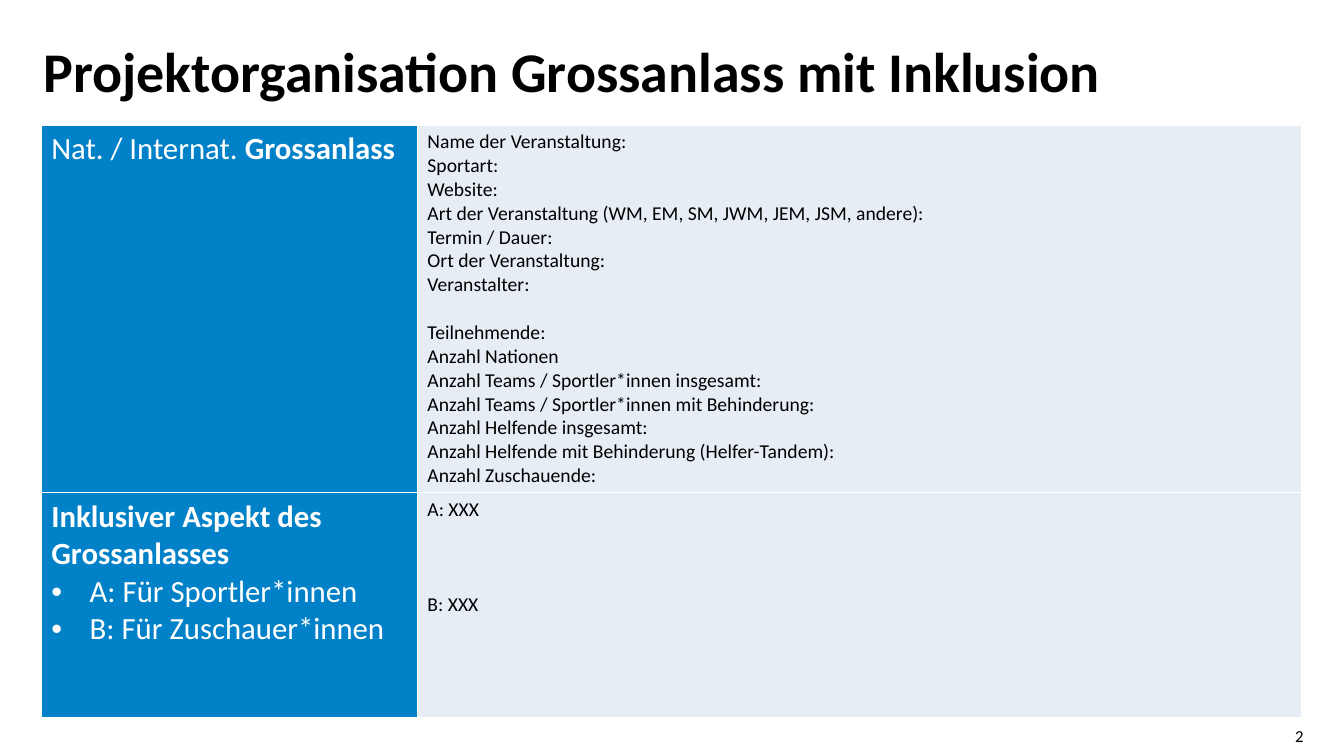
from pptx import Presentation
from pptx.dml.color import RGBColor
from pptx.enum.text import MSO_ANCHOR, MSO_AUTO_SIZE, PP_ALIGN
from pptx.oxml import parse_xml
from pptx.oxml.ns import nsdecls
from pptx.util import Inches, Pt

BLACK = RGBColor(0x00, 0x00, 0x00)
WHITE = RGBColor(0xFF, 0xFF, 0xFF)
BLUE = RGBColor(0x00, 0x81, 0xC8)
PALE = RGBColor(0xE7, 0xED, 0xF5)
FACE = "Calibri"
LINE = 17  # height of one line of 14 pt text, in points


def style(par, size, color, bold=None):
    par.font.name = FACE
    par.font.size = Pt(size)
    par.font.color.rgb = color
    par.font.bold = bold


def strip(frame):
    frame.margin_left = frame.margin_right = 0
    frame.margin_top = frame.margin_bottom = 0
    frame.word_wrap = True
    frame.auto_size = MSO_AUTO_SIZE.NONE


deck = Presentation()
deck.slide_width, deck.slide_height = Inches(13.33), Inches(7.5)
slide = deck.slides.add_slide(deck.slide_layouts[5])

# Title
title = slide.shapes.title
title.left, title.top = Inches(0.43), Inches(0.44)
title.width, title.height = Inches(10.73), Inches(0.85)
frame = title.text_frame
strip(frame)
frame.vertical_anchor = MSO_ANCHOR.TOP
par = frame.paragraphs[0]
par.text = "Projektorganisation Grossanlass mit Inklusion"
par.alignment = PP_ALIGN.LEFT
par.line_spacing = 0.9
style(par, 40, BLACK, True)

# Table content: each paragraph is (runs, blank lines before, bullet),
# each run is (text, bold)
event = [([("Nat. / Internat. ", False), ("Grossanlass", True)], 0, False)]
facts = [([(text, False)], gap, False) for text, gap in [
    ("Name der Veranstaltung:", 0),
    ("Sportart:", 0),
    ("Website:", 0),
    ("Art der Veranstaltung (WM, EM, SM, JWM, JEM, JSM, andere):", 0),
    ("Termin / Dauer:", 0),
    ("Ort der Veranstaltung:", 0),
    ("Veranstalter:", 0),
    ("Teilnehmende:", 1),
    ("Anzahl Nationen", 0),
    ("Anzahl Teams / Sportler*innen insgesamt:", 0),
    ("Anzahl Teams / Sportler*innen mit Behinderung:", 0),
    ("Anzahl Helfende insgesamt:", 0),
    ("Anzahl Helfende mit Behinderung (Helfer-Tandem):", 0),
    ("Anzahl Zuschauende:", 0),
]]
aspect = [
    ([("Inklusiver Aspekt des Grossanlasses", True)], 0, False),
    ([("A: Für Sportler*innen", False)], 0, True),
    ([("B: Für Zuschauer*innen", False)], 0, True),
]
answer = [([("A: XXX", False)], 0, False), ([("B: XXX", False)], 3, False)]
grid = [[event, facts], [aspect, answer]]
looks = [(22, WHITE, BLUE), (14, BLACK, PALE)]  # size, text, fill by column
widths, heights = [3.73, 8.77], [3.63, 2.23]

# Table
table = slide.shapes.add_table(
    2, 2, Inches(0.41), Inches(1.24),
    Inches(sum(widths)), Inches(sum(heights))).table
table.first_row = table.horz_banding = False
for col, width in zip(table.columns, widths):
    col.width = Inches(width)
for row, height in zip(table.rows, heights):
    row.height = Inches(height)

for r, items in enumerate(grid):
    for c, pars in enumerate(items):
        size, color, fill = looks[c]
        cell = table.cell(r, c)
        # White borders, then the fill
        props = cell._tc.get_or_add_tcPr()
        for side in "LRTB":
            props.append(parse_xml(
                f'<a:ln{side} w="12700" {nsdecls("a")}><a:solidFill>'
                f'<a:srgbClr val="{WHITE}"/></a:solidFill></a:ln{side}>'))
        cell.fill.solid()
        cell.fill.fore_color.rgb = fill
        # Text
        frame = cell.text_frame
        for i, (runs, gap, bullet) in enumerate(pars):
            par = frame.add_paragraph() if i else frame.paragraphs[0]
            if gap:
                par.space_before = Pt(gap * LINE)
            if bullet:
                indent = par._p.get_or_add_pPr()
                indent.set("marL", str(Inches(0.38)))
                indent.set("indent", str(-Inches(0.38)))
                indent.append(parse_xml(
                    f'<a:buFont typeface="Arial" {nsdecls("a")}/>'))
                indent.append(parse_xml(
                    f'<a:buChar char="•" {nsdecls("a")}/>'))
            style(par, size, color)
            for text, bold in runs:
                run = par.add_run()
                run.text = text
                run.font.bold = bold

# Page number
box = slide.shapes.add_textbox(
    Inches(12.46), Inches(7.2), Inches(0.47), Inches(0.2))
frame = box.text_frame
strip(frame)
frame.vertical_anchor = MSO_ANCHOR.MIDDLE
par = frame.paragraphs[0]
par.text = "2"
par.alignment = PP_ALIGN.RIGHT
style(par, 12, BLACK)

deck.save("out.pptx")
